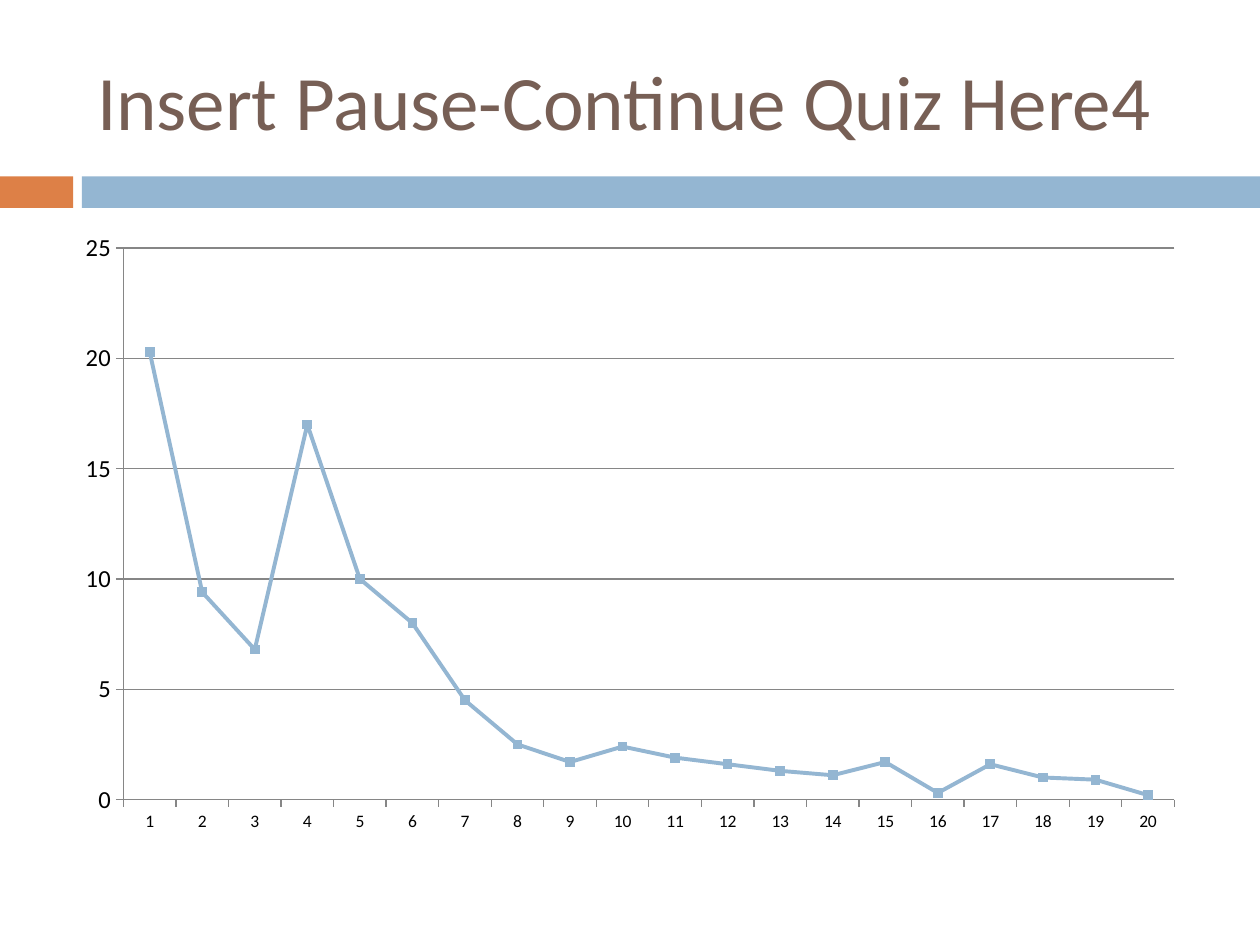
import pptx
import pptx.chart.data
import pptx.dml.color
import pptx.enum.chart
import pptx.enum.shapes
import pptx.enum.text
import pptx.util

RGB = pptx.dml.color.RGBColor
Inch = pptx.util.Inches
Pt = pptx.util.Pt
kinds = pptx.enum.chart

# Content
TITLE = "Insert Pause-Continue Quiz Here4"
VALUES = [20.3, 9.4, 6.8, 17, 10, 8, 4.5, 2.5, 1.7, 2.4,
          1.9, 1.6, 1.3, 1.1, 1.7, 0.3, 1.6, 1, 0.9, 0.2]

# Style and layout
FONT = "Calibri"
ORANGE = RGB(0xDD, 0x80, 0x47)
BLUE = RGB(0x94, 0xB6, 0xD2)
BROWN = RGB(0x77, 0x5F, 0x55)
GRAY = RGB(0x86, 0x86, 0x86)
BLACK = RGB(0, 0, 0)
WIDE, HIGH = 10, 7.5
SPLIT, GAP = 0.58, 0.07
BARS = [(0, SPLIT, ORANGE), (SPLIT + GAP, WIDE - SPLIT - GAP, BLUE)]


def box(left, top, width, height):
    return [Inch(n) for n in (left, top, width, height)]


deck = pptx.Presentation()
deck.slide_width, deck.slide_height = Inch(WIDE), Inch(HIGH)
slide = deck.slides.add_slide(deck.slide_layouts[5])

# Band under the title
for left, width, color in BARS:
    bar = slide.shapes.add_shape(pptx.enum.shapes.MSO_SHAPE.RECTANGLE,
                                 *box(left, 1.4, width, 0.25))
    bar.shadow.inherit = False
    bar.fill.solid()
    bar.fill.fore_color.rgb = color
    bar.line.fill.background()

# Title
title = slide.shapes.title
title.left, title.top, title.width, title.height = box(0.67, 0.25, 8.92, 1.08)
frame = title.text_frame
frame.word_wrap = True
frame.vertical_anchor = pptx.enum.text.MSO_ANCHOR.MIDDLE
para = frame.paragraphs[0]
para.alignment = pptx.enum.text.PP_ALIGN.LEFT
run = para.add_run()
run.text = TITLE
run.font.name, run.font.size = FONT, Pt(44)
run.font.color.rgb = BROWN

# Line chart
data = pptx.chart.data.CategoryChartData()
data.categories = [str(n + 1) for n in range(len(VALUES))]
data.add_series("Series 1", VALUES)
chart = slide.shapes.add_chart(kinds.XL_CHART_TYPE.LINE_MARKERS,
                               *box(0.5, 1.75, 9, 4.95), data).chart
chart.has_legend = False
chart.has_title = False
chart.font.name, chart.font.size = FONT, Pt(10)
chart.font.color.rgb = BLACK

# Axes
for axis, size in ((chart.category_axis, 10), (chart.value_axis, 14)):
    axis.major_tick_mark = kinds.XL_TICK_MARK.OUTSIDE
    axis.minor_tick_mark = kinds.XL_TICK_MARK.NONE
    font = axis.tick_labels.font
    font.name, font.size = FONT, Pt(size)
    font.color.rgb = BLACK
    axis.format.line.color.rgb = GRAY
    axis.format.line.width = Pt(0.75)
scale = chart.value_axis
scale.minimum_scale, scale.maximum_scale, scale.major_unit = 0, 25, 5
scale.has_major_gridlines = True
grid = scale.major_gridlines.format.line
grid.color.rgb, grid.width = GRAY, Pt(0.75)

# Series
plot = chart.plots[0]
plot.vary_by_categories = False
line = plot.series[0]
line.smooth = False
line.format.line.color.rgb = BLUE
line.format.line.width = Pt(2.25)
mark = line.marker
mark.style, mark.size = kinds.XL_MARKER_STYLE.SQUARE, 5
mark.format.fill.solid()
mark.format.fill.fore_color.rgb = BLUE
mark.format.line.color.rgb = BLUE

deck.save("out.pptx")
